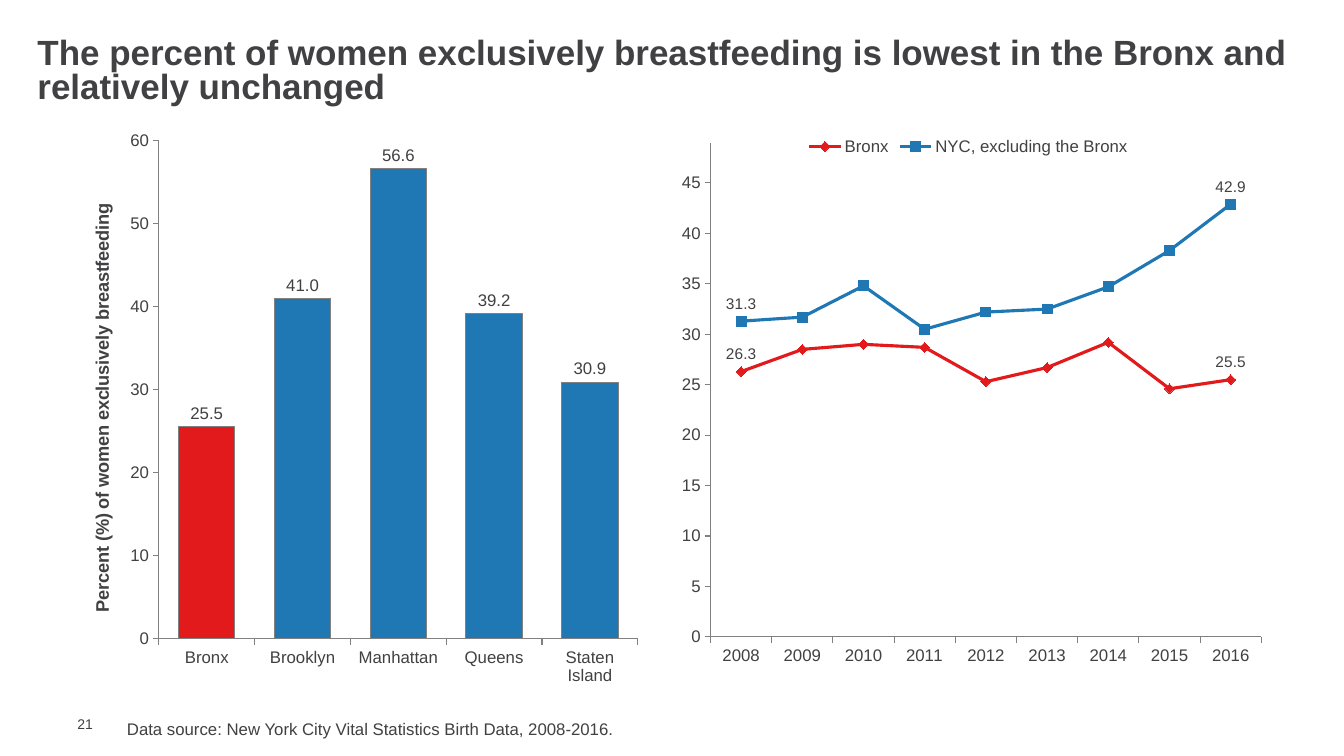
import pptx
import pptx.chart.data
import pptx.dml.color
import pptx.enum.chart
import pptx.enum.text
import pptx.util
from lxml import etree

Cm, Pt = pptx.util.Cm, pptx.util.Pt
XL = pptx.enum.chart
ANCHOR = pptx.enum.text.MSO_ANCHOR
TEXT, GREY, RED, BLUE = "414042", "808080", "E31A1C", "1F78B4"


def rgb(value):
    return pptx.dml.color.RGBColor.from_string(value)


def style_font(font, size, bold=False):
    font.name = "Arial"
    font.size = Pt(size)
    font.bold = bold
    font.color.rgb = rgb(TEXT)


prs = pptx.Presentation()
prs.slide_width, prs.slide_height = Cm(33.87), Cm(19.05)
s = prs.slides.add_slide(prs.slide_layouts[5])

title = s.shapes.title
title.left, title.top, title.width, title.height = Cm(0.69), Cm(0.84), Cm(32.49), Cm(1.96)
tf = title.text_frame
tf.auto_size = pptx.enum.text.MSO_AUTO_SIZE.NONE
tf.vertical_anchor = ANCHOR.MIDDLE
p = tf.paragraphs[0]
p.alignment = pptx.enum.text.PP_ALIGN.LEFT
p.line_spacing = 0.8
r = p.add_run()
r.text = "The percent of women exclusively breastfeeding is lowest in the Bronx and relatively unchanged"
style_font(r.font, 25, True)

trend_data = pptx.chart.data.CategoryChartData()
trend_data.categories = [str(year) for year in range(2008, 2017)]
trend_data.add_series("Bronx", [26.3, 28.5, 29, 28.7, 25.3, 26.7, 29.2, 24.6, 25.5])
trend_data.add_series("NYC, excluding the Bronx", [31.3, 31.7, 34.8, 30.5, 32.2, 32.5, 34.7, 38.3, 42.9])
trend = s.shapes.add_chart(
    XL.XL_CHART_TYPE.LINE_MARKERS, Cm(17.02), Cm(3.18), Cm(14.78), Cm(13.84), trend_data).chart

borough_data = pptx.chart.data.CategoryChartData()
borough_data.categories = ["Bronx", "Brooklyn", "Manhattan", "Queens", "Staten Island"]
borough_data.add_series("Series 1", [25.5, 41, 56.6, 39.2, 30.9])
boroughs = s.shapes.add_chart(
    XL.XL_CHART_TYPE.COLUMN_CLUSTERED, Cm(1.68), Cm(3.18), Cm(14.81), Cm(14.35), borough_data).chart

for chart, top, step, layout in [
    (trend, 49, 5, (0.06, 0.03, 0.94, 0.9)),
    (boroughs, 60, 10, (0.157, 0.025, 0.815, 0.875)),
]:
    chart.has_title = False
    chart.has_legend = False
    style_font(chart.font, 12)
    for axis in (chart.category_axis, chart.value_axis):
        axis.has_major_gridlines = False
        axis.major_tick_mark = XL.XL_TICK_MARK.OUTSIDE
        axis.minor_tick_mark = XL.XL_TICK_MARK.NONE
        axis.format.line.color.rgb = rgb(GREY)
        axis.format.line.width = Pt(0.75)
        style_font(axis.tick_labels.font, 12)
    axis = chart.value_axis
    axis.minimum_scale, axis.maximum_scale, axis.major_unit = 0, top, step
    axis.tick_labels.number_format = "0"
    axis.tick_labels.number_format_is_linked = False
    plot_area = chart.plots[0]._element.getparent()
    ns = plot_area.nsmap["c"]
    for old in plot_area.findall("{%s}layout" % ns):
        plot_area.remove(old)
    outer = etree.Element("{%s}layout" % ns)
    manual = etree.SubElement(outer, "{%s}manualLayout" % ns)
    settings = [("layoutTarget", "inner"), ("xMode", "edge"), ("yMode", "edge"), *zip("xywh", layout)]
    for tag, value in settings:
        etree.SubElement(manual, "{%s}%s" % (ns, tag)).set("val", str(value))
    plot_area.insert(0, outer)

trend.has_legend = True
trend.legend.position = XL.XL_LEGEND_POSITION.TOP
trend.legend.include_in_layout = False
style_font(trend.legend.font, 12)
for series, color, marker in zip(
    trend.plots[0].series, (RED, BLUE), (XL.XL_MARKER_STYLE.DIAMOND, XL.XL_MARKER_STYLE.SQUARE)
):
    series.smooth = False
    series.format.line.color.rgb = rgb(color)
    series.format.line.width = Pt(2.25)
    series.marker.style = marker
    series.marker.size = 7
    series.marker.format.fill.solid()
    series.marker.format.fill.fore_color.rgb = rgb(color)
    series.marker.format.line.color.rgb = rgb(color)
    series.data_labels.show_value = False
    for index in (0, 8):
        label = series.points[index].data_label
        style_font(label.font, 11)
        label.position = XL.XL_LABEL_POSITION.ABOVE

axis_title = boroughs.value_axis.axis_title.text_frame
r = axis_title.paragraphs[0].add_run()
r.text = "Percent (%) of women exclusively breastfeeding"
style_font(r.font, 13, True)
plot = boroughs.plots[0]
plot.gap_width = 70
plot.vary_by_categories = False
bars = plot.series[0]
for bar, color in [(bars, BLUE), (bars.points[0], RED)]:
    bar.format.fill.solid()
    bar.format.fill.fore_color.rgb = rgb(color)
    bar.format.line.color.rgb = rgb(GREY)
    bar.format.line.width = Pt(0.75)
labels = bars.data_labels
labels.show_value = True
labels.number_format = "#,##0.0"
labels.number_format_is_linked = False
labels.position = XL.XL_LABEL_POSITION.OUTSIDE_END
style_font(labels.font, 12)

for text, size, left, top, width, height in [
    ("21", 10, 1.7, 18.03, 1.09, 0.43),
    ("Data source: New York City Vital Statistics Birth Data, 2008-2016.", 12, 2.95, 17.98, 25.2, 0.76),
]:
    tf = s.shapes.add_textbox(Cm(left), Cm(top), Cm(width), Cm(height)).text_frame
    tf.word_wrap = True
    tf.vertical_anchor = ANCHOR.MIDDLE
    tf.margin_top = tf.margin_bottom = tf.margin_right = 0
    r = tf.paragraphs[0].add_run()
    r.text = text
    style_font(r.font, size)

prs.save("out.pptx")
